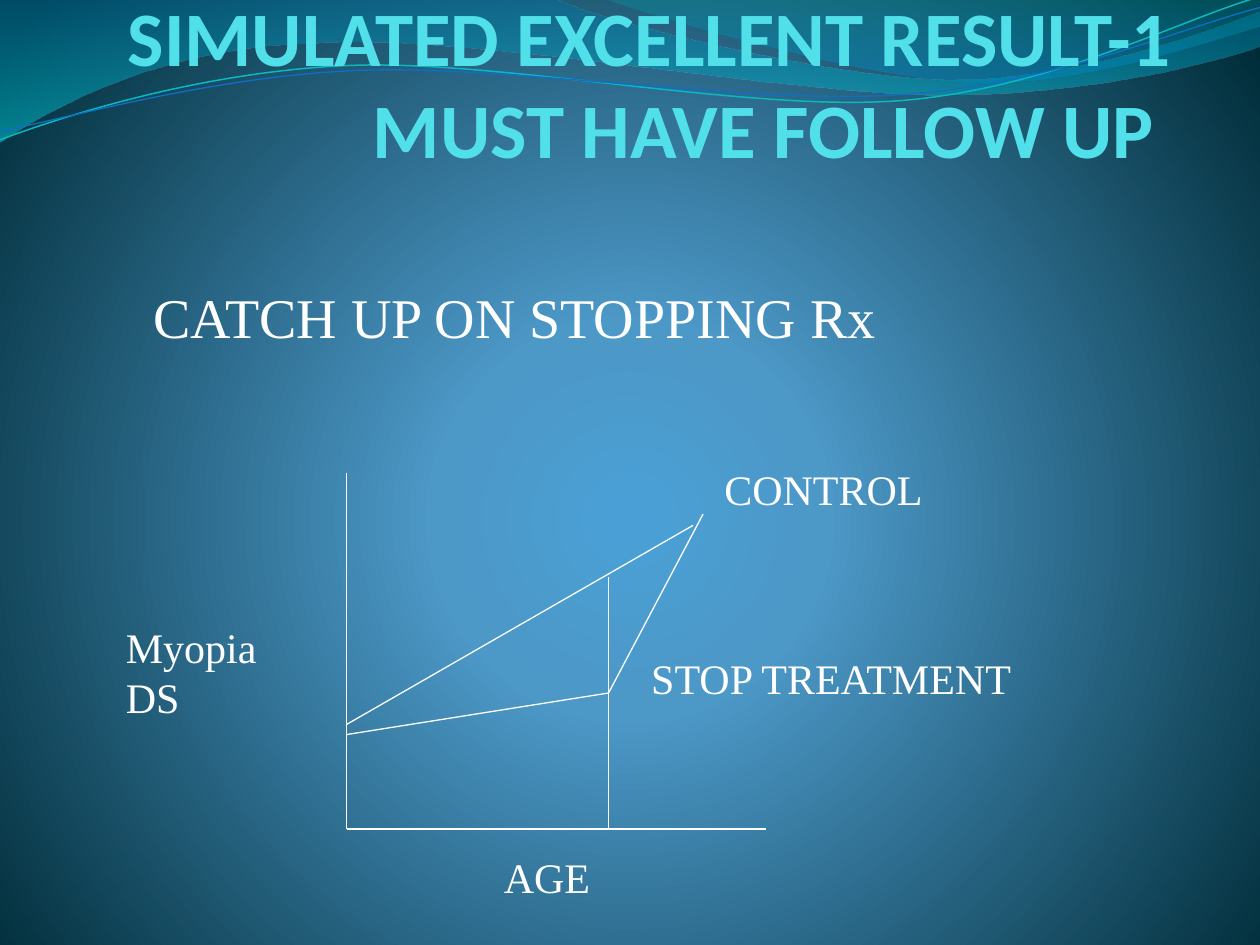
from dataclasses import dataclass
from math import cos, radians, sin
from typing import Optional

from pptx import Presentation
from pptx.dml.color import RGBColor
from pptx.enum.shapes import MSO_CONNECTOR as Connector
from pptx.enum.text import MSO_ANCHOR as Anchor, PP_ALIGN as Align
from pptx.oxml import parse_xml
from pptx.oxml.ns import nsdecls, qn
from pptx.util import Inches, Pt

WHITE = RGBColor(0xFF, 0xFF, 0xFF)
TITLE_CYAN = RGBColor(0x51, 0xE0, 0xEA)
SKY = RGBColor(0x4A, 0xA0, 0xD6)
STEEL = RGBColor(0x4C, 0x98, 0xC7)
DEEP = RGBColor(0x00, 0x2C, 0x38)
OCEAN = RGBColor(0x00, 0x74, 0xA1)
AQUA = RGBColor(0x00, 0xC6, 0xCF)
TEAL = RGBColor(0x00, 0xA1, 0xA9)
AZURE = RGBColor(0x00, 0x8B, 0xBF)
WAVE_TEAL = RGBColor(0x0A, 0xB8, 0xBF)
WAVE_BLUE = RGBColor(0x0F, 0x6F, 0xC6)

TILT = -2.7  # degrees, for the two thin waves
Point = tuple[float, float]
Stop = tuple[int, RGBColor, int]  # position %, colour, opacity %


@dataclass
class Wave:
    """A start point, then segments of one point (straight) or three (cubic)."""
    start: Point
    segments: list[list[Point]]
    stops: Optional[list[Stop]] = None
    line: Optional[RGBColor] = None
    weight: float = 0.75
    center: Optional[Point] = None  # pivot of a tilted wave


@dataclass
class Label:
    text: str
    left: float
    top: float
    width: float
    height: float
    size: int = 24


WAVES = [
    Wave((0, 0), [[(4.4, -0.01)],
                  [(4.76, 0.17), (6.64, 0.63), (7.58, 0.63)],
                  [(8.53, 0.63), (9.58, 0.26), (10, 0.09)],
                  [(10.01, 0.36)],
                  [(9.83, 0.44), (8.7, 0.76), (7.46, 0.75)],
                  [(6.22, 0.75), (3.82, 0.28), (2.57, 0.34)],
                  [(1.29, 0.36), (0.46, 0.83), (-0.01, 1.13)]],
         stops=[(0, OCEAN, 45), (100, AQUA, 55)]),
    Wave((4.79, -0.01), [[(5.09, 0.11), (6.82, 0.62), (7.69, 0.65)],
                         [(8.56, 0.69), (9.61, 0.32), (10, 0.21)],
                         [(10, 0)]],
         stops=[(0, TEAL, 30), (80, AZURE, 45)]),
    Wave((0, 1.11), [[(0.48, 0.93), (1.58, 0.57), (2.77, 0.52)],
                     [(3.95, 0.47), (5.93, 0.89), (7.13, 0.8)],
                     [(8.33, 0.71), (9.38, 0.15), (9.98, -0.02)]],
         line=WAVE_TEAL, weight=0.85, center=(4.99, 0.57)),
    Wave((0, 1.04), [[(0.47, 0.96), (1.64, 0.61), (2.83, 0.56)],
                     [(4.03, 0.51), (5.97, 0.84), (7.17, 0.75)],
                     [(8.36, 0.67), (9.41, 0.21), (10, 0.06)]],
         line=WAVE_BLUE, center=(5, 0.59)),
]

# Graph: shared points of the axes and curves
ORIGIN = (2.75, 6.58)
STOP_POINT = (4.83, 5.5)
GRAPH_LINES = [
    ((2.75, 3.75), ORIGIN),            # myopia axis
    (ORIGIN, (6.08, 6.58)),            # age axis
    ((2.75, 5.75), (5.5, 4.17)),       # control
    ((2.75, 5.83), STOP_POINT),        # treated
    (STOP_POINT, (5.58, 4.08)),        # catch up
    (STOP_POINT, (4.83, 6.58)),        # stop marker, lower part
    ((4.83, 4.58), (4.83, 5.58)),      # stop marker, upper part
]

LABELS = [
    Label("Myopia\nDS", 0.9, 4.88, 1.24, 0.9),
    Label("AGE", 3.9, 6.71, 0.89, 0.5),
    Label("CONTROL", 5.65, 3.63, 1.78, 0.5),
    Label("CATCH UP ON STOPPING Rx", 1.12, 2.19, 6, 0.63, 32),
    Label("STOP TREATMENT", 5.07, 5.13, 3.12, 0.5),
]


def set_gradient(parent, stops: list[Stop], direction: str) -> None:
    """Replace the solid fill in parent by a gradient."""
    stop_xml = ""
    for position, color, opacity in stops:
        alpha = f'<a:alpha val="{opacity * 1000}"/>' if opacity < 100 else ""
        stop_xml += (f'<a:gs pos="{position * 1000}">'
                     f'<a:srgbClr val="{color}">{alpha}</a:srgbClr></a:gs>')
    gradient = parse_xml(f'<a:gradFill {nsdecls("a")} rotWithShape="1">'
                         f'<a:gsLst>{stop_xml}</a:gsLst>{direction}</a:gradFill>')
    parent.replace(parent.find(qn("a:solidFill")), gradient)


def place(point: Point, center: Optional[Point]) -> Point:
    """Convert to lengths, levelling the points of a tilted wave."""
    x, y = point
    if center:
        angle = radians(-TILT)
        dx, dy = x - center[0], y - center[1]
        x = center[0] + dx * cos(angle) - dy * sin(angle)
        y = center[1] + dx * sin(angle) + dy * cos(angle)
    return Inches(x), Inches(y)


def draw_wave(slide, wave: Wave) -> None:
    segments = [[place(point, wave.center) for point in segment]
                for segment in wave.segments]
    builder = slide.shapes.build_freeform(*place(wave.start, wave.center))
    builder.add_line_segments([segment[-1] for segment in segments],
                              close=wave.stops is not None)
    ribbon = builder.convert_to_shape()

    # Bend the straight segments that have control points
    sides = list(ribbon.element.iter(qn("a:lnTo")))
    for side, segment in zip(sides, segments):
        if len(segment) == 3:
            points = "".join(f'<a:pt x="{x - ribbon.left}" y="{y - ribbon.top}"/>'
                             for x, y in segment)
            curve = parse_xml(f'<a:cubicBezTo {nsdecls("a")}>{points}</a:cubicBezTo>')
            side.getparent().replace(side, curve)

    ribbon.shadow.inherit = False
    if wave.center:
        ribbon.rotation = TILT
    if wave.stops:
        ribbon.fill.solid()
        set_gradient(ribbon.element.spPr, wave.stops, '<a:lin ang="5400000" scaled="1"/>')
        ribbon.line.fill.background()
    else:
        ribbon.fill.background()
        ribbon.line.color.rgb = wave.line
        ribbon.line.width = Pt(wave.weight)


def draw_line(slide, start: Point, end: Point) -> None:
    segment = slide.shapes.add_connector(
        Connector.STRAIGHT, *(Inches(value) for value in start + end))
    segment.line.color.rgb = WHITE
    segment.line.width = Pt(0.75)
    segment.element.spPr.append(parse_xml(f'<a:effectLst {nsdecls("a")}/>'))


def draw_label(slide, label: Label) -> None:
    frame = slide.shapes.add_textbox(Inches(label.left), Inches(label.top),
                                     Inches(label.width), Inches(label.height)).text_frame
    frame.word_wrap = False
    frame.text = label.text
    for paragraph in frame.paragraphs:
        for run in paragraph.runs:
            run.font.name = "Times New Roman"
            run.font.size = Pt(label.size)
            run.font.color.rgb = WHITE


def draw_title(slide) -> None:
    title = slide.shapes.title
    slide.shapes.element.append(title.element)  # bring in front of the waves
    title.left, title.top = Inches(0.82), Inches(0.13)
    title.width, title.height = Inches(8.5), Inches(1.25)
    frame = title.text_frame
    frame.word_wrap = True
    frame.vertical_anchor = Anchor.BOTTOM
    frame.margin_left = frame.margin_top = frame.margin_bottom = 0
    frame.margin_right = Inches(0.02)
    heading = frame.paragraphs[0]
    heading.text = "SIMULATED EXCELLENT RESULT-1\vMUST HAVE FOLLOW UP "
    heading.alignment = Align.RIGHT
    for run in heading.runs:
        run.font.name = "Calibri"
        run.font.size = Pt(44)
        run.font.bold = True
        run.font.color.rgb = TITLE_CYAN


def main() -> None:
    prs = Presentation()
    prs.slide_width, prs.slide_height = Inches(10), Inches(7.5)
    slide = prs.slides.add_slide(prs.slide_layouts[0])
    subtitle = slide.placeholders[1].element
    subtitle.getparent().remove(subtitle)

    # Background
    slide.background.fill.solid()
    set_gradient(slide.element.find(".//" + qn("p:bgPr")),
                 [(0, SKY, 100), (25, STEEL, 100), (100, DEEP, 100)],
                 '<a:path path="circle"><a:fillToRect l="10000" t="110000" '
                 'r="10000" b="100000"/></a:path>')

    # Waves and title
    for wave in WAVES:
        draw_wave(slide, wave)
    draw_title(slide)

    # Graph and its labels
    for start, end in GRAPH_LINES:
        draw_line(slide, start, end)
    for label in LABELS:
        draw_label(slide, label)

    prs.save("out.pptx")


if __name__ == "__main__":
    main()
